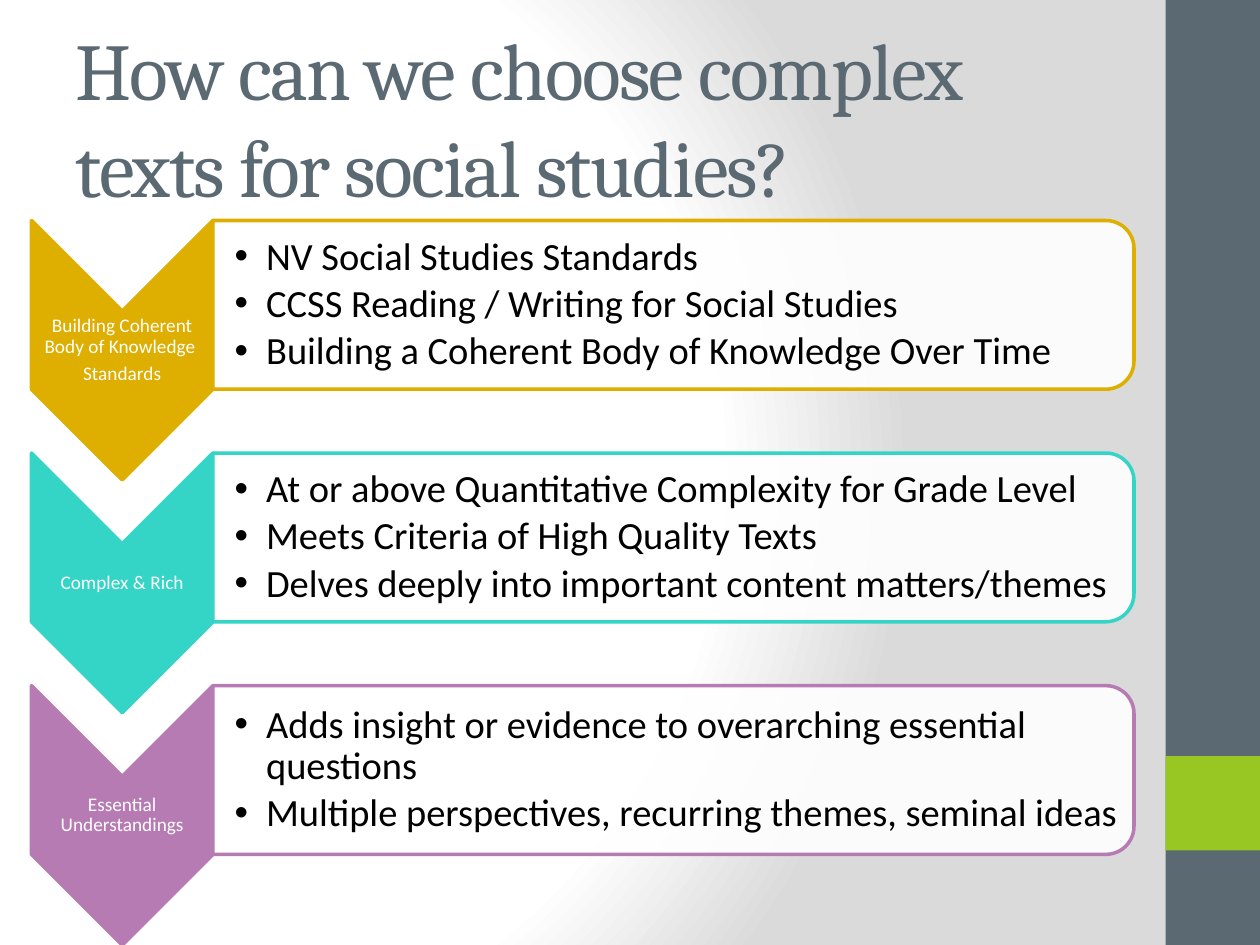
from lxml import etree
from pptx import Presentation
from pptx.dml.color import RGBColor
from pptx.enum import shapes, text
from pptx.oxml import ns
from pptx.util import Pt

SLATE, LIME, WHITE, BLACK = "5B6973", "98C723", "FFFFFF", "000000"
KIND = shapes.MSO_SHAPE
ROWS = [
    ("DEAE00",
     ["Building Coherent Body of Knowledge ", "Standards"],
     ["NV Social Studies Standards",
      "CCSS Reading / Writing for Social Studies",
      "Building a Coherent Body of Knowledge Over Time"]),
    ("34D4C6",
     ["Complex & Rich"],
     ["At or above Quantitative Complexity for Grade Level",
      "Meets Criteria of High Quality Texts",
      "Delves deeply into important content matters/themes"]),
    ("B77BB4",
     ["Essential Understandings"],
     ["Adds insight or evidence to overarching essential questions",
      "Multiple perspectives, recurring themes, seminal ideas"]),
]


def rgb(code):
    """Turn a hex string into a colour."""
    return RGBColor.from_string(code)


def sub(node, tag, **attrs):
    """Append a DrawingML child to a node."""
    return etree.SubElement(node, ns.qn("a:" + tag), attrs)


def shade(slide):
    """Give the slide its round white-to-grey background."""
    fill = slide.background.fill
    fill.gradient()
    grad = slide.background._cSld.find(".//" + ns.qn("a:gradFill"))
    for node in list(grad):
        grad.remove(node)
    stops = sub(grad, "gsLst")
    for pos, code in ((0, WHITE), (75, WHITE), (100, "DADADA")):
        sub(sub(stops, "gs", pos=str(pos * 1000)), "srgbClr", val=code)
    ring = sub(grad, "path", path="circle")
    sub(ring, "fillToRect", l="20000", t="50000", r="100000", b="50000")


def block(slide, kind, box, fill, line=None, turn=False):
    """Draw a shape filling the box, turned a quarter if asked."""
    x, y, w, h = box
    if turn:
        x, y, w, h = x + (w - h) / 2, y + (h - w) / 2, h, w
    item = slide.shapes.add_shape(kind, Pt(x), Pt(y), Pt(w), Pt(h))
    item.shadow.inherit = False
    item.rotation = 90 if turn else 0
    item.fill.solid()
    item.fill.fore_color.rgb = rgb(fill)
    if line:
        item.line.color.rgb = rgb(line)
        item.line.width = Pt(2)
    else:
        item.line.fill.background()
    return item


def write(slide, box, lines, size, face, color, pads=None):
    """Place a middle-anchored text box and return its paragraphs."""
    item = slide.shapes.add_textbox(*map(Pt, box))
    frame = item.text_frame
    frame.text = "\n".join(lines)
    frame.word_wrap = True
    frame.vertical_anchor = text.MSO_ANCHOR.MIDDLE
    if pads:
        frame.margin_left = Pt(pads[0])
        frame.margin_top = frame.margin_right = frame.margin_bottom = Pt(pads[1])
    for para in frame.paragraphs:
        font = para.runs[0].font
        font.size, font.name = Pt(size), face
        font.color.rgb = rgb(color)
    return frame.paragraphs


def side(slide, x, w, h):
    """Draw the side band with its accent square."""
    block(slide, KIND.RECTANGLE, (x, 0, w, h), SLATE)
    block(slide, KIND.RECTANGLE, (x, 432, w, w), LIME)


def title(slide, box):
    """Write the heading."""
    line = "How can we choose complex texts for social studies?"
    para = write(slide, box, [line], 46, "Cambria", SLATE)[0]
    para.runs[0].font._element.set("spc", "-100")


def row(slide, x, y, color, name, points):
    """Draw one chevron with its label and bulleted panel."""
    wide = 103.7
    block(slide, KIND.CHEVRON, (x, y, wide, 148.3), color, color, True)
    for para in write(slide, (x, y + 51.8, wide, 44.6), name, 11,
                      "Calibri", WHITE, (0.7, 0.7)):
        para.alignment = text.PP_ALIGN.CENTER
        para.line_spacing = 0.9
        para.space_after = Pt(3.85)
    panel = block(slide, KIND.ROUND_2_SAME_RECTANGLE,
                  (x + wide, y, 526.3, 96.4), WHITE, color, True)
    tint = panel.fill._xPr.find(ns.qn("a:solidFill"))[0]
    sub(tint, "alpha", val="90000")
    for para in write(slide, (x + wide, y + 4.7, 522, 87), points, 22,
                      "Calibri", BLACK, (12.4, 1.4)):
        para.line_spacing = 0.9
        para.space_after = Pt(3.3)
        props = para._p.get_or_add_pPr()
        props.set("marL", str(Pt(18)))
        props.set("indent", str(-Pt(18)))
        sub(props, "buFont", typeface="Arial")
        sub(props, "buChar", char="•")


def main():
    """Build and save the slide."""
    deck = Presentation()
    deck.slide_width, deck.slide_height = Pt(720), Pt(540)
    slide = deck.slides.add_slide(deck.slide_layouts[6])
    shade(slide)
    side(slide, 666, 54, 540)
    title(slide, (36, 21.6, 600, 90))
    for i, parts in enumerate(ROWS):
        row(slide, 18, 126 + i * 132.9, *parts)
    deck.save("out.pptx")


if __name__ == "__main__":
    main()
